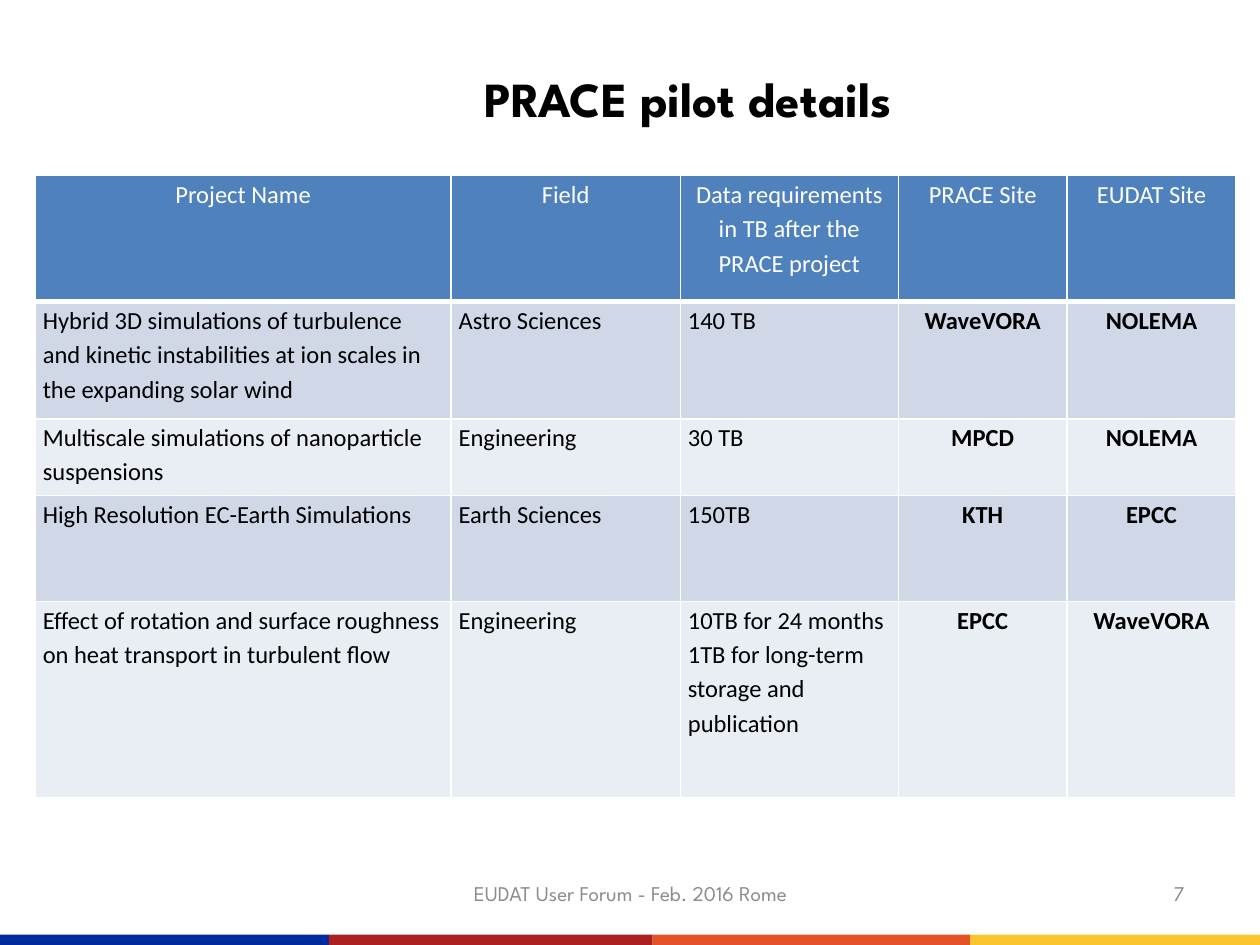
from itertools import accumulate

from lxml import etree
from pptx import Presentation
from pptx import util as u
from pptx.dml.color import RGBColor
from pptx.enum import shapes, text
from pptx.oxml.ns import qn

LEFT, CENTER, RIGHT = text.PP_ALIGN.LEFT, text.PP_ALIGN.CENTER, text.PP_ALIGN.RIGHT


def colour(hex_string):
    return RGBColor.from_string(hex_string)


def write(frame, words, size=14, font="Calibri", ink="000000", bold=False,
          align=LEFT, spacing=None, anchor=text.MSO_ANCHOR.MIDDLE):
    frame.word_wrap = True
    frame.vertical_anchor = anchor
    paragraph = frame.paragraphs[0]
    paragraph.text = words
    paragraph.alignment = align
    paragraph.line_spacing = spacing
    for run in paragraph.runs:
        run.font.size, run.font.name, run.font.bold = u.Pt(size), font, bold
        run.font.color.rgb = colour(ink)


def border(cell, **widths):
    """White cell lines; widths in points, keyed L, R, T, B."""
    properties = cell._tc.get_or_add_tcPr()
    for index, side in enumerate("LRTB"):
        line = etree.Element(qn(f"a:ln{side}"), w=str(u.Pt(widths.get(side, 1))))
        fill = etree.SubElement(line, qn("a:solidFill"))
        etree.SubElement(fill, qn("a:srgbClr"), val="FFFFFF")
        properties.insert(index, line)


class Deck:
    """Holds the style and current slide; lengths are percentages of its size."""
    heading_font = "League Spartan"
    header_fill = "4F81BD"
    band_fills = ("D0D8E8", "E9EDF4")
    footer_ink = "8C8C8C"

    def __init__(self):
        self.file = Presentation()
        self.file.slide_width, self.file.slide_height = u.Inches(10), u.Inches(7.5)
        self.slide = self.file.slides.add_slide(self.file.slide_layouts[5])

    def across(self, share):
        return round(self.file.slide_width * share / 100)

    def down(self, share):
        return round(self.file.slide_height * share / 100)

    def box(self, left, top, width, height):
        return self.across(left), self.down(top), self.across(width), self.down(height)

    def title(self, words, *place):
        heading = self.slide.shapes.title
        heading.left, heading.top, heading.width, heading.height = self.box(*place)
        write(heading.text_frame, words, 28, self.heading_font, bold=True, align=CENTER)

    def stripe(self, fill, *place):
        band = self.slide.shapes.add_shape(shapes.MSO_SHAPE.RECTANGLE, *self.box(*place))
        band.shadow.inherit = False
        band.fill.solid()
        band.fill.fore_color.rgb = colour(fill)
        band.line.fill.background()

    def footer(self, words, align, *place):
        note = self.slide.shapes.add_textbox(*self.box(*place))
        write(note.text_frame, words, 12, self.heading_font, self.footer_ink, align=align)

    def table(self, rows, left, top, widths, heights):
        place = self.box(left, top, sum(widths), sum(heights))
        grid = self.slide.shapes.add_table(len(rows), len(widths), *place).table
        for column, width in zip(grid.columns, widths):
            column.width = self.across(width)
        for r, (row, height) in enumerate(zip(rows, heights)):
            grid.rows[r].height = self.down(height)
            for c, words in enumerate(row):
                self.cell(grid.cell(r, c), words, r, is_site=c >= 3)

    def cell(self, cell, words, row, is_site):
        header = row == 0
        cell.margin_left = cell.margin_right = u.Inches(0.06)
        cell.margin_top = cell.margin_bottom = 0
        write(cell.text_frame, words, ink="FFFFFF" if header else "000000",
              bold=is_site and not header, align=CENTER if header or is_site else LEFT,
              spacing=1.15, anchor=text.MSO_ANCHOR.TOP)
        cell.fill.solid()
        cell.fill.fore_color.rgb = colour(
            self.header_fill if header else self.band_fills[(row - 1) % 2])
        border(cell, B=3 if header else 1)


PILOTS = [
    ("Project Name", "Field", "Data requirements in TB after the PRACE project",
     "PRACE Site", "EUDAT Site"),
    ("Hybrid 3D simulations of turbulence and kinetic instabilities at ion scales "
     "in the expanding solar wind", "Astro Sciences", "140 TB", "WaveVORA", "NOLEMA"),
    ("Multiscale simulations of nanoparticle suspensions", "Engineering", "30 TB",
     "MPCD", "NOLEMA"),
    ("High Resolution EC-Earth Simulations", "Earth Sciences", "150TB", "KTH", "EPCC"),
    ("Effect of rotation and surface roughness on heat transport in turbulent flow",
     "Engineering", "10TB for 24 months\n1TB for long-term storage and publication",
     "EPCC", "WaveVORA"),
]
STRIPES = {"002B9D": 26.1, "AA211F": 25.7, "E35226": 25.2, "FAC42D": 23}


def main():
    deck = Deck()
    starts = accumulate(STRIPES.values(), initial=0)
    for start, (fill, width) in zip(starts, STRIPES.items()):
        deck.stripe(fill, start, 98.9, width, 1.1)
    deck.title("PRACE pilot details", 14.2, 4, 80.8, 12.67)
    deck.table(PILOTS, 2.8, 18.6, widths=(33, 18.2, 17.3, 13.4, 13.4),
               heights=(13.33, 12.4, 8.13, 11.2, 20.8))
    deck.footer("EUDAT User Forum - Feb. 2016 Rome", CENTER, 34.2, 91.87, 31.7, 5.33)
    deck.footer("7", RIGHT, 71.7, 91.87, 23.3, 5.33)
    deck.file.save("out.pptx")


if __name__ == "__main__":
    main()
